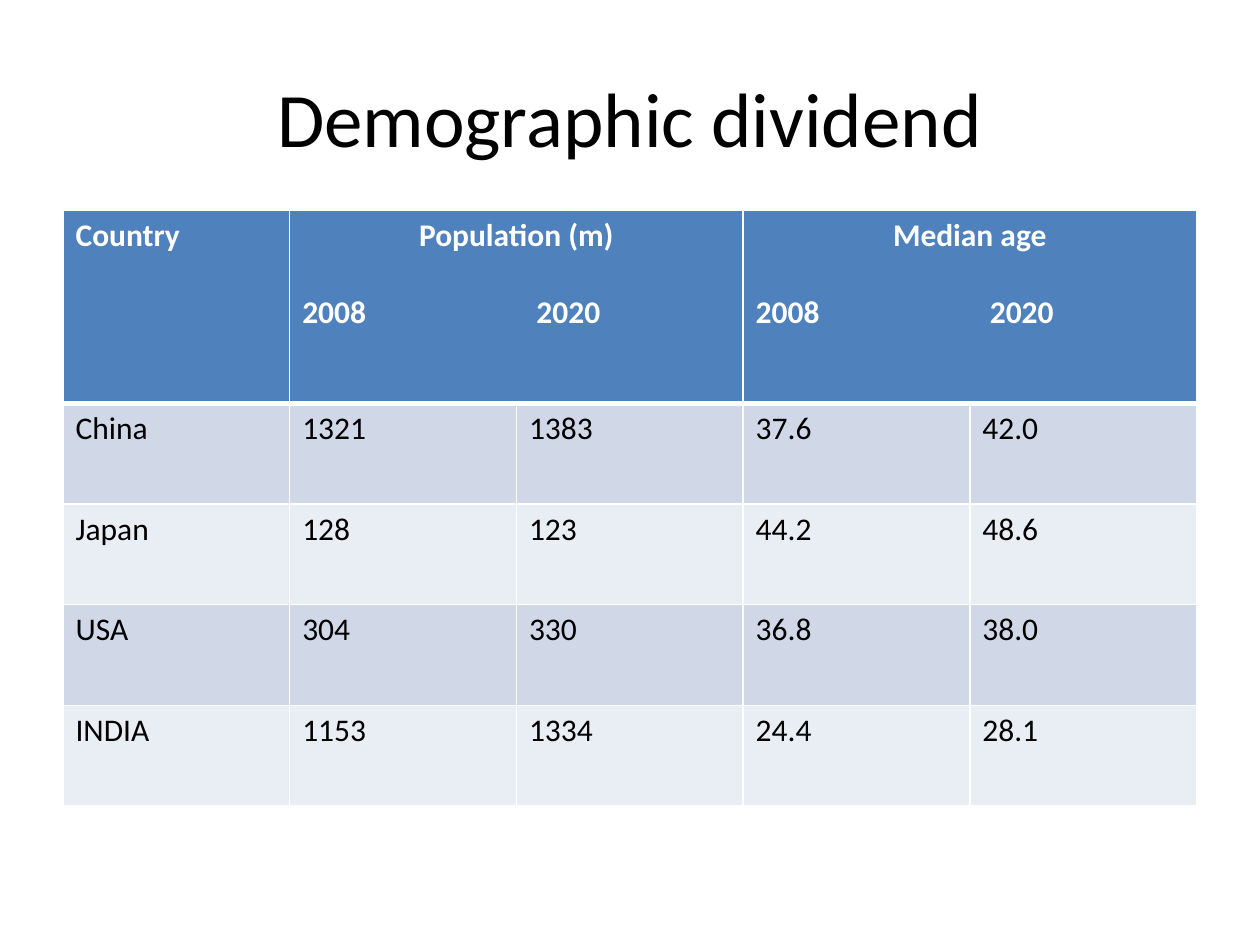
from typing import NamedTuple

from lxml.etree import SubElement
from pptx import Presentation
from pptx.dml.color import RGBColor
from pptx.enum.text import MSO_ANCHOR, PP_ALIGN
from pptx.oxml.ns import qn
from pptx.util import Cm, Pt

FONT = "Calibri"
BLACK = RGBColor(0x00, 0x00, 0x00)
WHITE = RGBColor(0xFF, 0xFF, 0xFF)
HEADER_BLUE = RGBColor(0x4F, 0x81, 0xBD)
BANDS = (RGBColor(0xD0, 0xD8, 0xE8), RGBColor(0xE9, 0xED, 0xF4))

HEADER_HEIGHT, ROW_HEIGHT, COLUMN_WIDTH = Cm(3.89), Cm(2.03), Cm(4.57)
YEAR_TAB = Cm(4.72)


class Country(NamedTuple):
    name: str
    population_2008: str
    population_2020: str
    median_age_2008: str
    median_age_2020: str


COUNTRIES = (
    Country("China", "1321", "1383", "37.6", "42.0"),
    Country("Japan", "128", "123", "44.2", "48.6"),
    Country("USA", "304", "330", "36.8", "38.0"),
    Country("INDIA", "1153", "1334", "24.4", "28.1"),
)


def format_paragraph(paragraph, size: int, color: RGBColor, bold: bool = False) -> None:
    for run in paragraph.runs:
        run.font.name = FONT
        run.font.size = Pt(size)
        run.font.bold = bold
        run.font.color.rgb = color


def style_cell(cell, fill: RGBColor, top: float = 1, bottom: float = 1) -> None:
    """Draw white borders, then the fill that must follow them in the XML."""
    properties = cell._tc.get_or_add_tcPr()
    for side, width in (("L", 1), ("R", 1), ("T", top), ("B", bottom)):
        line = SubElement(properties, qn(f"a:ln{side}"), w=str(Pt(width)))
        solid = SubElement(line, qn("a:solidFill"))
        SubElement(solid, qn("a:srgbClr"), val=str(WHITE))
    cell.fill.solid()
    cell.fill.fore_color.rgb = fill


def add_year_header(table, column: int, heading: str) -> None:
    """Merge two header cells and set the years under a centred heading."""
    cell = table.cell(0, column)
    cell.merge(table.cell(0, column + 1))
    cell.text_frame.text = f"{heading}\n2008\t2020"
    title, years = cell.text_frame.paragraphs
    title.alignment = PP_ALIGN.CENTER
    years.space_before = Pt(22)
    tabs = SubElement(years._p.get_or_add_pPr(), qn("a:tabLst"))
    SubElement(tabs, qn("a:tab"), pos=str(YEAR_TAB), algn="l")


def add_country_table(slide) -> None:
    columns = len(Country._fields)
    table = slide.shapes.add_table(
        len(COUNTRIES) + 1, columns, Cm(1.27), Cm(4.24),
        COLUMN_WIDTH * columns, HEADER_HEIGHT + ROW_HEIGHT * len(COUNTRIES),
    ).table
    for column in table.columns:
        column.width = COLUMN_WIDTH
    for index, row in enumerate(table.rows):
        row.height = ROW_HEIGHT if index else HEADER_HEIGHT

    # Header row
    table.cell(0, 0).text_frame.text = "Country"
    add_year_header(table, 1, "Population (m)")
    add_year_header(table, 3, "Median age")
    for cell in table.rows[0].cells:
        style_cell(cell, HEADER_BLUE, bottom=3)
        for paragraph in cell.text_frame.paragraphs:
            format_paragraph(paragraph, 18, WHITE, bold=True)

    # Country rows in alternating bands
    for index, country in enumerate(COUNTRIES):
        for cell, value in zip(table.rows[index + 1].cells, country):
            cell.text_frame.text = value
            format_paragraph(cell.text_frame.paragraphs[0], 18, BLACK)
            style_cell(cell, BANDS[index % 2], top=1 if index else 3)


def main() -> None:
    presentation = Presentation()
    presentation.slide_width, presentation.slide_height = Cm(25.4), Cm(19.05)
    slide = presentation.slides.add_slide(presentation.slide_layouts[5])

    # Title
    title = slide.shapes.title
    title.left, title.top, title.width, title.height = Cm(1.27), Cm(0.76), Cm(22.86), Cm(3.18)
    title.text_frame.text = "Demographic dividend"
    title.text_frame.vertical_anchor = MSO_ANCHOR.MIDDLE
    paragraph = title.text_frame.paragraphs[0]
    paragraph.alignment = PP_ALIGN.CENTER
    format_paragraph(paragraph, 44, BLACK)

    add_country_table(slide)
    presentation.save("out.pptx")


if __name__ == "__main__":
    main()
